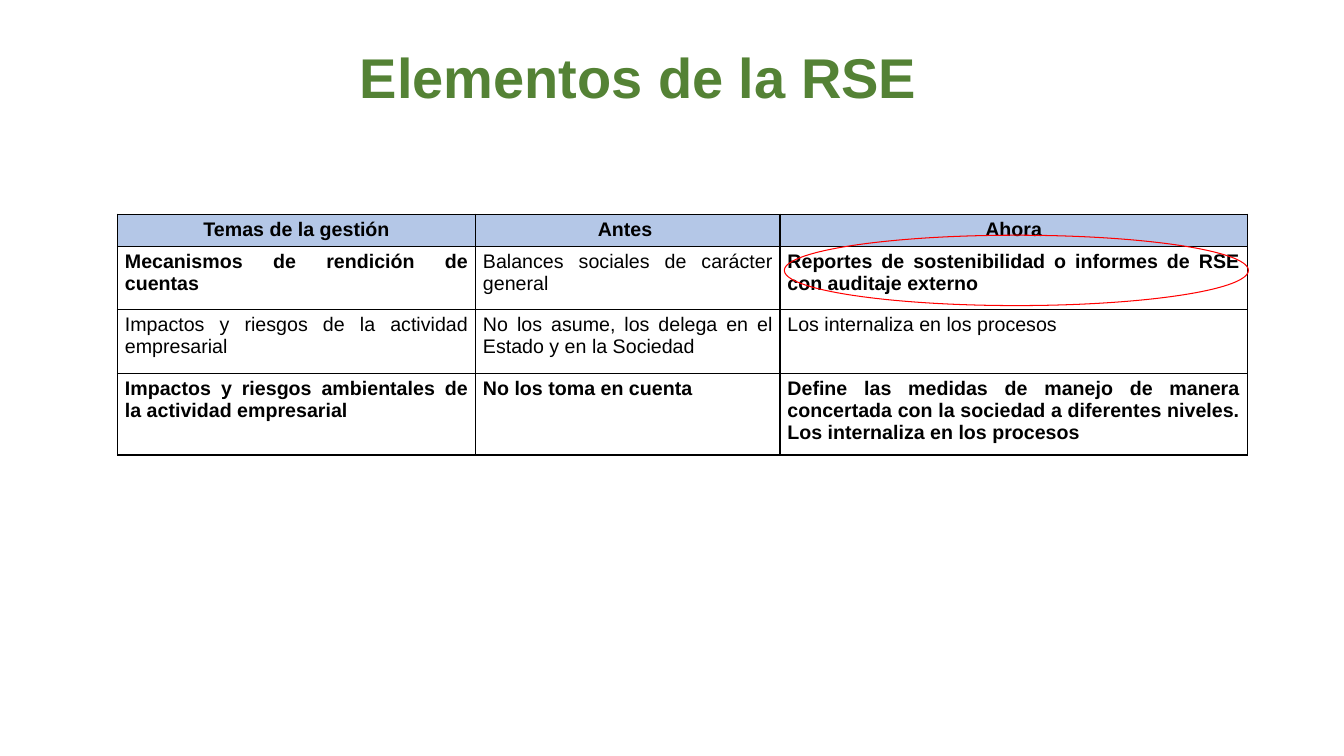
from lxml import etree
from pptx import Presentation
from pptx.dml.color import RGBColor
from pptx.enum.shapes import MSO_SHAPE
from pptx.enum.text import MSO_ANCHOR, MSO_AUTO_SIZE, PP_ALIGN
from pptx.oxml.ns import qn
from pptx.util import Pt

PX = 9525
FONT = "Arial"
BLACK = RGBColor(0x00, 0x00, 0x00)
GREEN = RGBColor(0x54, 0x82, 0x35)
BLUE = RGBColor(0xB4, 0xC7, 0xE7)
RED = RGBColor(0xFF, 0x00, 0x00)
OVAL = MSO_SHAPE.OVAL
TOP = MSO_ANCHOR.TOP
GROW = MSO_AUTO_SIZE.SHAPE_TO_FIT_TEXT
LEFT, CENTER, JUSTIFY = PP_ALIGN.LEFT, PP_ALIGN.CENTER, PP_ALIGN.JUSTIFY

COLS = [341, 290, 445]
ROWS = [29, 60, 61, 78]
TOPICS = [
    ["Temas de la gestión", "Antes ", "Ahora"],
    ["Mecanismos de rendición de cuentas",
     "Balances sociales de carácter general",
     "Reportes de sostenibilidad o informes de RSE con auditaje externo"],
    ["Impactos y riesgos de la actividad empresarial",
     "No los asume, los delega en el Estado y en la Sociedad",
     "Los internaliza en los procesos"],
    ["Impactos y riesgos ambientales de la actividad empresarial",
     "No los toma en cuenta ",
     "Define las medidas de manejo de manera concertada con la sociedad "
     "a diferentes niveles. Los internaliza en los procesos"],
]
PLAIN = {(1, 1), (2, 0), (2, 1), (2, 2)}


def px(*sizes):
    return [size * PX for size in sizes]


def style(para, size, color, bold, align):
    para.alignment = align
    for run in para.runs:
        font = run.font
        font.name, font.size, font.bold = FONT, Pt(size), bold
        font.color.rgb = color


def add_title(slide, text, box):
    title = slide.shapes.title
    title.left, title.top, title.width, title.height = px(*box)
    frame = title.text_frame
    frame.text = text
    frame.word_wrap = False
    frame.auto_size = GROW
    frame.vertical_anchor = TOP
    style(frame.paragraphs[0], 40, GREEN, True, LEFT)


def add_borders(cell):
    props = cell._tc.get_or_add_tcPr()
    for side in ("lnL", "lnR", "lnT", "lnB"):
        line = etree.SubElement(props, qn(f"a:{side}"), w=str(Pt(1)))
        fill = etree.SubElement(line, qn("a:solidFill"))
        etree.SubElement(fill, qn("a:srgbClr"), val=str(BLACK))


def fill_cell(cell, text, head, bold):
    cell.text = text
    cell.margin_left, cell.margin_right = px(7, 7)
    cell.margin_top, cell.margin_bottom = px(4, 4)
    add_borders(cell)
    if head:
        cell.fill.solid()
        cell.fill.fore_color.rgb = BLUE
    else:
        cell.fill.background()
    align = CENTER if head else JUSTIFY
    style(cell.text_frame.paragraphs[0], 14, BLACK, bold, align)


def add_grid(slide, left, top):
    box = px(left, top, sum(COLS), sum(ROWS))
    table = slide.shapes.add_table(len(ROWS), len(COLS), *box).table
    for col, width in zip(table.columns, COLS):
        col.width = width * PX
    for row, height in zip(table.rows, ROWS):
        row.height = height * PX
    for r, texts in enumerate(TOPICS):
        for c, text in enumerate(texts):
            fill_cell(table.cell(r, c), text, r == 0, (r, c) not in PLAIN)


def add_ring(slide, box):
    ring = slide.shapes.add_shape(OVAL, *px(*box))
    ring.shadow.inherit = False
    ring.fill.background()
    ring.line.color.rgb = RED
    ring.line.width = Pt(0.75)


def main():
    deck = Presentation()
    deck.slide_width, deck.slide_height = px(1280, 720)
    slide = deck.slides.add_slide(deck.slide_layouts[5])
    add_grid(slide, 112, 204)
    add_ring(slide, (747, 224, 442, 67))
    add_title(slide, "Elementos de la RSE", (333, 36, 555, 74))
    deck.save("out.pptx")


if __name__ == "__main__":
    main()
